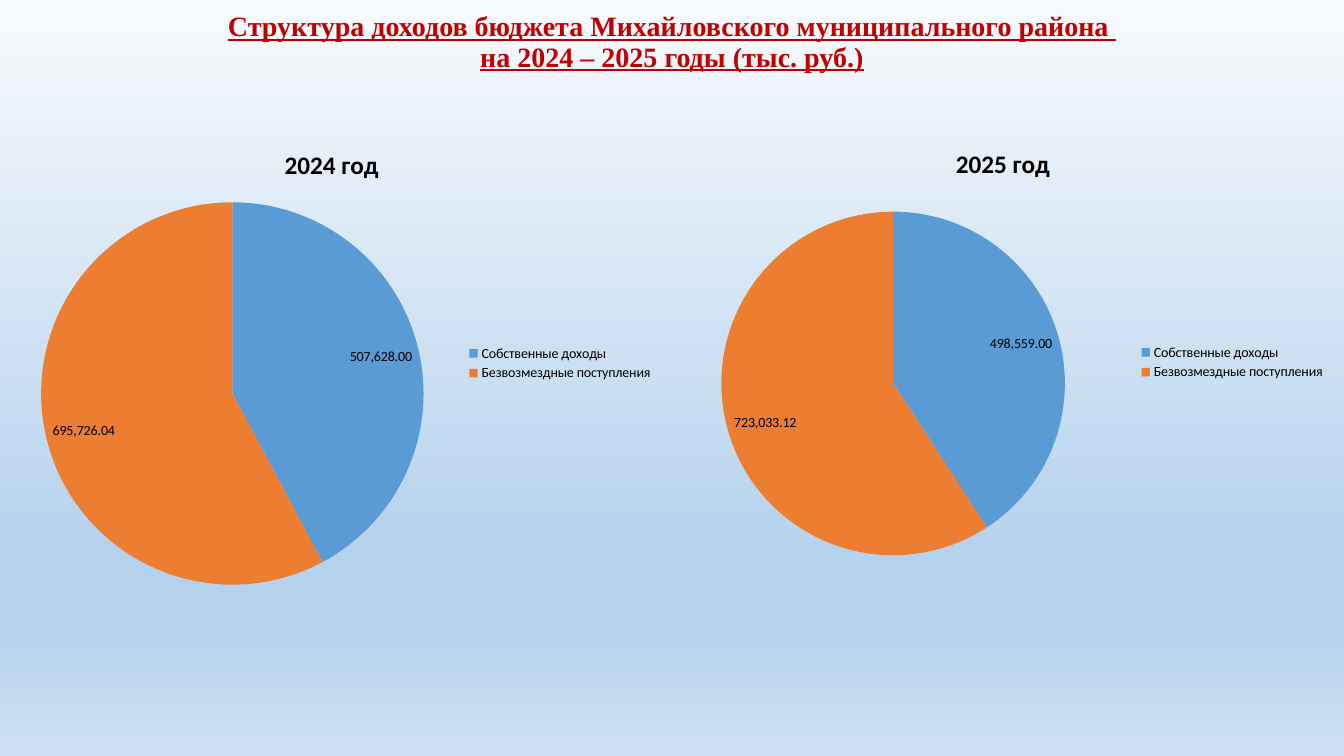
from copy import deepcopy
from dataclasses import dataclass

from lxml import etree
from pptx import Presentation
from pptx.chart.data import CategoryChartData as ChartData
from pptx.dml.color import RGBColor
from pptx.enum.chart import XL_CHART_TYPE as Kind
from pptx.enum.chart import XL_LABEL_POSITION as Spot
from pptx.enum.chart import XL_LEGEND_POSITION as Side
from pptx.enum.text import MSO_ANCHOR as Anchor
from pptx.enum.text import MSO_AUTO_SIZE as Fit
from pptx.enum.text import PP_ALIGN as Align
from pptx.oxml.ns import qn
from pptx.util import Pt

BLACK = RGBColor(0x00, 0x00, 0x00)
RED = RGBColor(0xC0, 0x00, 0x00)
BLUE = RGBColor(0x5B, 0x9B, 0xD5)
ORANGE = RGBColor(0xED, 0x7D, 0x31)
PALE = RGBColor(0xF7, 0xFA, 0xFD)
SKY = RGBColor(0xB5, 0xD2, 0xEC)
MIST = RGBColor(0xCE, 0xE1, 0xF2)

STOPS = [(0, PALE), (0.74, SKY), (0.83, SKY), (1, MIST)]
PARTS = {"Собственные доходы": BLUE, "Безвозмездные поступления": ORANGE}
LINES = [
    "Структура доходов бюджета Михайловского муниципального района ",
    "на 2024 – 2025 годы (тыс. руб.)",
]
HEAD = {"size": Pt(20), "name": "Times New Roman", "bold": True, "underline": True}
BODY = {"size": Pt(10), "name": "Calibri"}
YEAR = {"size": Pt(18), "name": "Calibri", "bold": True}


@dataclass
class Pie:
    title: str
    vals: tuple[float, float]
    box: tuple[float, float, float, float]
    plot: dict[str, float] | None = None


PIES = [
    Pie("2024 год", (507628, 695726.04), (0, 91.4, 473.8, 336.2)),
    Pie("2025 год", (498559, 723033.12), (478.8, 90.7, 475.2, 336.2),
        {"x": 0.06, "y": 0.18, "w": 0.55, "h": 0.73}),
]


def style(font, form: dict, color: RGBColor) -> None:
    for key, val in form.items():
        setattr(font, key, val)
    font.color.rgb = color


def paint(slide) -> None:
    """Fill the background with a gradient running downwards."""
    fill = slide.background.fill
    fill.gradient()
    fill.gradient_angle = 270
    group = slide.element.find(".//" + qn("a:gsLst"))
    for _ in range(len(STOPS) - len(group)):
        group.append(deepcopy(group[0]))
    for stop, (pos, color) in zip(fill.gradient_stops, STOPS):
        stop.position = pos
        stop.color.rgb = color


def head(slide) -> None:
    """Place and format the slide title."""
    box = slide.shapes.title
    box.left, box.top, box.width, box.height = Pt(0), Pt(0), Pt(960), Pt(61.2)
    frame = box.text_frame
    frame.auto_size = Fit.NONE
    frame.vertical_anchor = Anchor.MIDDLE
    para = frame.paragraphs[0]
    para.alignment = Align.CENTER
    para.line_spacing = 0.9
    for i, line in enumerate(LINES):
        if i:
            para.add_line_break()
        run = para.add_run()
        run.text = line
        style(run.font, HEAD, RED)


def place(chart, plot: dict[str, float]) -> None:
    """Fix the inner plot area as shares of the chart."""
    area = chart.element.find(".//" + qn("c:plotArea"))
    lay = area.find(qn("c:layout"))
    if lay is None:
        lay = etree.Element(qn("c:layout"))
        area.insert(0, lay)
    rule = etree.SubElement(lay, qn("c:manualLayout"))
    items = {"layoutTarget": "inner", "xMode": "edge", "yMode": "edge", **plot}
    for tag, val in items.items():
        etree.SubElement(rule, qn("c:" + tag)).set("val", str(val))


def draw(slide, pie: Pie) -> None:
    data = ChartData()
    data.categories = list(PARTS)
    data.add_series("Series 1", pie.vals)
    box = [Pt(n) for n in pie.box]
    chart = slide.shapes.add_chart(Kind.PIE, *box, data).chart
    style(chart.font, BODY, BLACK)

    chart.has_title = True
    frame = chart.chart_title.text_frame
    frame.text = pie.title
    style(frame.paragraphs[0].runs[0].font, YEAR, BLACK)

    chart.has_legend = True
    chart.legend.position = Side.RIGHT
    chart.legend.include_in_layout = False

    plot = chart.plots[0]
    plot.vary_by_categories = True
    for i, color in enumerate(PARTS.values()):
        fill = plot.series[0].points[i].format.fill
        fill.solid()
        fill.fore_color.rgb = color

    plot.has_data_labels = True
    form = {"show_value": True, "show_percentage": False,
            "number_format": "#,##0.00", "number_format_is_linked": False,
            "position": Spot.INSIDE_END}
    for key, val in form.items():
        setattr(plot.data_labels, key, val)
    if pie.plot:
        place(chart, pie.plot)


def main() -> None:
    deck = Presentation()
    deck.slide_width, deck.slide_height = Pt(960), Pt(540)
    slide = deck.slides.add_slide(deck.slide_layouts[5])
    paint(slide)
    head(slide)
    for pie in PIES:
        draw(slide, pie)
    deck.save("out.pptx")


if __name__ == "__main__":
    main()
